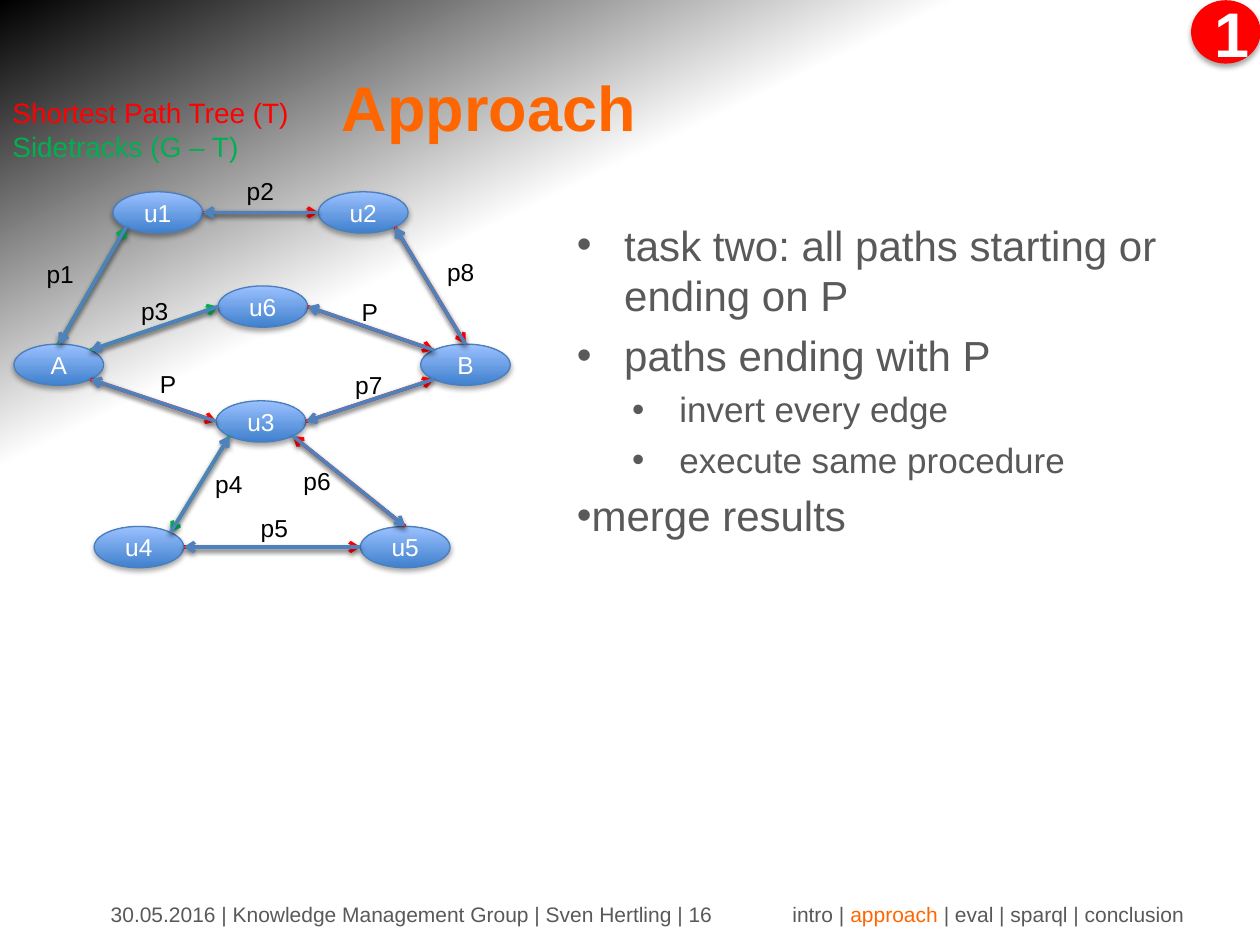
"""Build the slide on the search approach with its path graph."""
from dataclasses import dataclass
from math import sqrt

from lxml import etree
from pptx import Presentation
from pptx import util as u
from pptx.dml.color import RGBColor
from pptx.enum import shapes, text
from pptx.oxml import ns

Pt = u.Pt
ALIGN, ANCHOR = text.PP_ALIGN, text.MSO_ANCHOR


@dataclass(frozen=True)
class Theme:
    font: str = "Arial"
    white: str = "FFFFFF"
    black: str = "000000"
    grey: str = "595959"
    orange: str = "FF6600"
    tree: str = "FF0000"
    sidetrack: str = "00B050"
    inverse: str = "4F81BD"
    node_low: str = "3F80CD"
    node_high: str = "9BC1FF"
    node_line: str = "4B7EBC"
    heading: float = 36
    body: float = 24
    sub: float = 20
    legend: float = 16
    label: float = 14
    footer: float = 12


@dataclass(frozen=True)
class Node:
    name: str
    left: float
    top: float
    width: float = 51.2
    height: float = 23.6

    def site(self, direction: str) -> tuple[float, float]:
        """Return the point on the outline in a compass direction."""
        dx = ("E" in direction) - ("W" in direction)
        dy = ("S" in direction) - ("N" in direction)
        reach = sqrt(dx * dx + dy * dy) * 2
        return (self.left + self.width * (0.5 + dx / reach),
                self.top + self.height * (0.5 + dy / reach))


@dataclass(frozen=True)
class Edge:
    source: str
    leaves: str
    target: str
    enters: str
    color: str


@dataclass(frozen=True)
class Label:
    words: str
    left: float
    top: float
    width: float


@dataclass(frozen=True)
class Point:
    words: str
    size: float
    margin: float
    indent: float


T = Theme()
ROOMY = (10, 5, 10, 5)
NORMAL = (7.2, 3.6, 7.2, 3.6)

NODES = {node.name: node for node in (
    Node("A", 8, 196.6), Node("u6", 124.6, 163.4), Node("u3", 123.6, 229),
    Node("u1", 64.6, 109.6), Node("u2", 182, 109.6), Node("B", 240.4, 196.6),
    Node("u4", 53.8, 300.8), Node("u5", 206, 300.8))}

EDGES = (
    Edge("A", "N", "u1", "SW", T.sidetrack), Edge("A", "NE", "u6", "W", T.sidetrack),
    Edge("A", "SE", "u3", "W", T.tree), Edge("u6", "E", "B", "NW", T.tree),
    Edge("u3", "E", "B", "SW", T.tree), Edge("u4", "E", "u5", "W", T.tree),
    Edge("u5", "N", "u3", "SE", T.tree), Edge("u1", "E", "u2", "W", T.tree),
    Edge("u2", "SE", "B", "N", T.tree), Edge("u3", "SW", "u4", "NE", T.sidetrack))

LABELS = (
    Label("p1", 16.6, 143.3, 42.5), Label("p2", 131, 95.8, 49.7),
    Label("p3", 70.6, 164.2, 44.6), Label("P", 81.4, 205.9, 33.8),
    Label("p5", 139, 288, 46.1), Label("p6", 163.4, 261.4, 43.9),
    Label("p7", 193, 206.6, 47.5), Label("p8", 245.5, 141.8, 45.4),
    Label("P", 196.6, 164.9, 33.8), Label("p4", 113, 262.8, 41.8))

POINTS = (
    Point("task two: all paths starting or ending on P", T.body, 27, -27),
    Point("paths ending with P", T.body, 27, -27),
    Point("invert every edge", T.sub, 58.5, -27),
    Point("execute same procedure", T.sub, 58.5, -27),
    Point("merge results", T.body, 0, -31.5))


def rgb(color: str) -> RGBColor:
    return RGBColor.from_string(color)


def blend(fill, first: tuple, last: tuple, angle: float) -> None:
    """Set a gradient between two (position, colour) stops."""
    fill.gradient()
    fill.gradient_angle = angle
    for stop, (position, color) in zip(fill.gradient_stops, (first, last)):
        stop.position = position
        stop.color.rgb = rgb(color)


def cast_shadow(properties, distance: float, opacity: int) -> None:
    """Add a soft shadow below a filled and outlined element."""
    effects = etree.SubElement(properties, ns.qn("a:effectLst"))
    shadow = etree.SubElement(effects, ns.qn("a:outerShdw"), blurRad=str(Pt(3.1)),
                              dist=str(Pt(distance)), dir="5400000", rotWithShape="0")
    shade = etree.SubElement(shadow, ns.qn("a:srgbClr"), val=T.black)
    etree.SubElement(shade, ns.qn("a:alpha"), val=str(opacity * 1000))


def write(frame, words, *, size, color, bold=False, align=ALIGN.LEFT, first=True):
    """Add a paragraph of words, or of (words, colour) runs, and return it."""
    paragraph = frame.paragraphs[0] if first else frame.add_paragraph()
    paragraph.alignment = align
    for piece, tint in [(words, color)] if isinstance(words, str) else words:
        run = paragraph.add_run()
        run.text = piece
        run.font.name, run.font.size, run.font.bold = T.font, Pt(size), bold
        run.font.color.rgb = rgb(tint)
    return paragraph


def set_frame(frame, insets=NORMAL, anchor=ANCHOR.TOP, grow=False):
    """Set wrapping, insets and anchor of a text frame and return it."""
    frame.word_wrap = True
    (frame.margin_left, frame.margin_top,
     frame.margin_right, frame.margin_bottom) = map(Pt, insets)
    frame.vertical_anchor = anchor
    if grow:
        frame.auto_size = text.MSO_AUTO_SIZE.SHAPE_TO_FIT_TEXT
    return frame


def text_area(slide, left, top, width, height, **options):
    area = slide.shapes.add_textbox(Pt(left), Pt(top), Pt(width), Pt(height))
    return set_frame(area.text_frame, **options)


def draw_ellipse(slide, node: Node, outline: str, insets, **style) -> "object":
    """Draw a captioned, shadowed ellipse and return it."""
    ellipse = slide.shapes.add_shape(shapes.MSO_SHAPE.OVAL, Pt(node.left), Pt(node.top),
                                     Pt(node.width), Pt(node.height))
    blend(ellipse.fill, (0, style.pop("low")), (1, style.pop("high")), 90)
    ellipse.line.color.rgb = rgb(outline)
    ellipse.line.width = Pt(0.75)
    cast_shadow(ellipse._element.spPr, 1.8, 35)
    frame = set_frame(ellipse.text_frame, insets, ANCHOR.MIDDLE)
    write(frame, node.name, color=T.white, align=ALIGN.CENTER, **style)
    return ellipse


def draw_arrow(slide, start: tuple, end: tuple, color: str) -> None:
    arrow = slide.shapes.add_connector(shapes.MSO_CONNECTOR.STRAIGHT,
                                       *map(Pt, (*start, *end)))
    arrow.line.color.rgb = rgb(color)
    arrow.line.width = Pt(2)
    etree.SubElement(arrow.line._get_or_add_ln(), ns.qn("a:tailEnd"), type="arrow")
    cast_shadow(arrow._element.spPr, 1.6, 38)


def draw_points(slide) -> None:
    frame = text_area(slide, 322.6, 121.7, 396.7, 228.2, grow=True)
    for index, point in enumerate(POINTS):
        paragraph = write(frame, point.words, size=point.size, color=T.grey, first=not index)
        if index:
            paragraph.space_before = Pt(round(point.size * 0.23, 1))
        layout = paragraph._p.get_or_add_pPr()
        layout.set("marL", str(Pt(point.margin)))
        layout.set("indent", str(Pt(point.indent)))
        etree.SubElement(layout, ns.qn("a:buFont"), typeface=T.font)
        etree.SubElement(layout, ns.qn("a:buChar"), char="•")


def draw_graph(slide) -> None:
    for node in NODES.values():
        draw_ellipse(slide, node, T.node_line, ROOMY, size=T.label,
                     low=T.node_low, high=T.node_high)
    ends = [(NODES[e.source].site(e.leaves), NODES[e.target].site(e.enters)) for e in EDGES]
    for edge, (start, end) in zip(EDGES, ends):
        draw_arrow(slide, start, end, edge.color)
    for label in LABELS:
        frame = text_area(slide, label.left, label.top, label.width, 27.4,
                          insets=ROOMY, grow=True)
        write(frame, label.words, size=T.label, color=T.black)
    for start, end in ends:
        draw_arrow(slide, end, start, T.inverse)


def main() -> None:
    deck = Presentation()
    deck.slide_width, deck.slide_height = Pt(720), Pt(540)
    slide = deck.slides.add_slide(deck.slide_layouts[6])
    blend(slide.background.fill, (0.7, T.white), (1, T.black), 116)
    draw_ellipse(slide, Node("1", 681, 0.5, 39, 35.5), T.tree, NORMAL,
                 size=T.heading, bold=True, low=T.tree, high=T.tree)
    title = text_area(slide, 36, 23.8, 485.3, 74.2, insets=(8.6, 3.6, 7.2, 3.6),
                      anchor=ANCHOR.MIDDLE)
    write(title, "Approach", size=T.heading, color=T.orange, bold=True, align=ALIGN.CENTER)
    draw_points(slide)
    draw_graph(slide)
    legend = text_area(slide, -2.9, 49.7, 180.7, 49, insets=ROOMY, grow=True)
    write(legend, "Shortest Path Tree (T)", size=T.legend, color=T.tree)
    write(legend, "Sidetracks (G – T)", size=T.legend, color=T.sidetrack, first=False)
    imprint = text_area(slide, 56.2, 510.5, 393.1, 23.8, anchor=ANCHOR.MIDDLE)
    write(imprint, "30.05.2016 | Knowledge Management Group | Sven Hertling | 16",
          size=T.footer, color=T.grey)
    agenda = text_area(slide, 445.7, 510.5, 243.4, 23.8, anchor=ANCHOR.MIDDLE)
    write(agenda, [("intro | ", T.grey), ("approach ", T.orange),
                   ("| eval | sparql | conclusion", T.grey)], size=T.footer, color=T.grey)
    deck.save("out.pptx")


if __name__ == "__main__":
    main()
